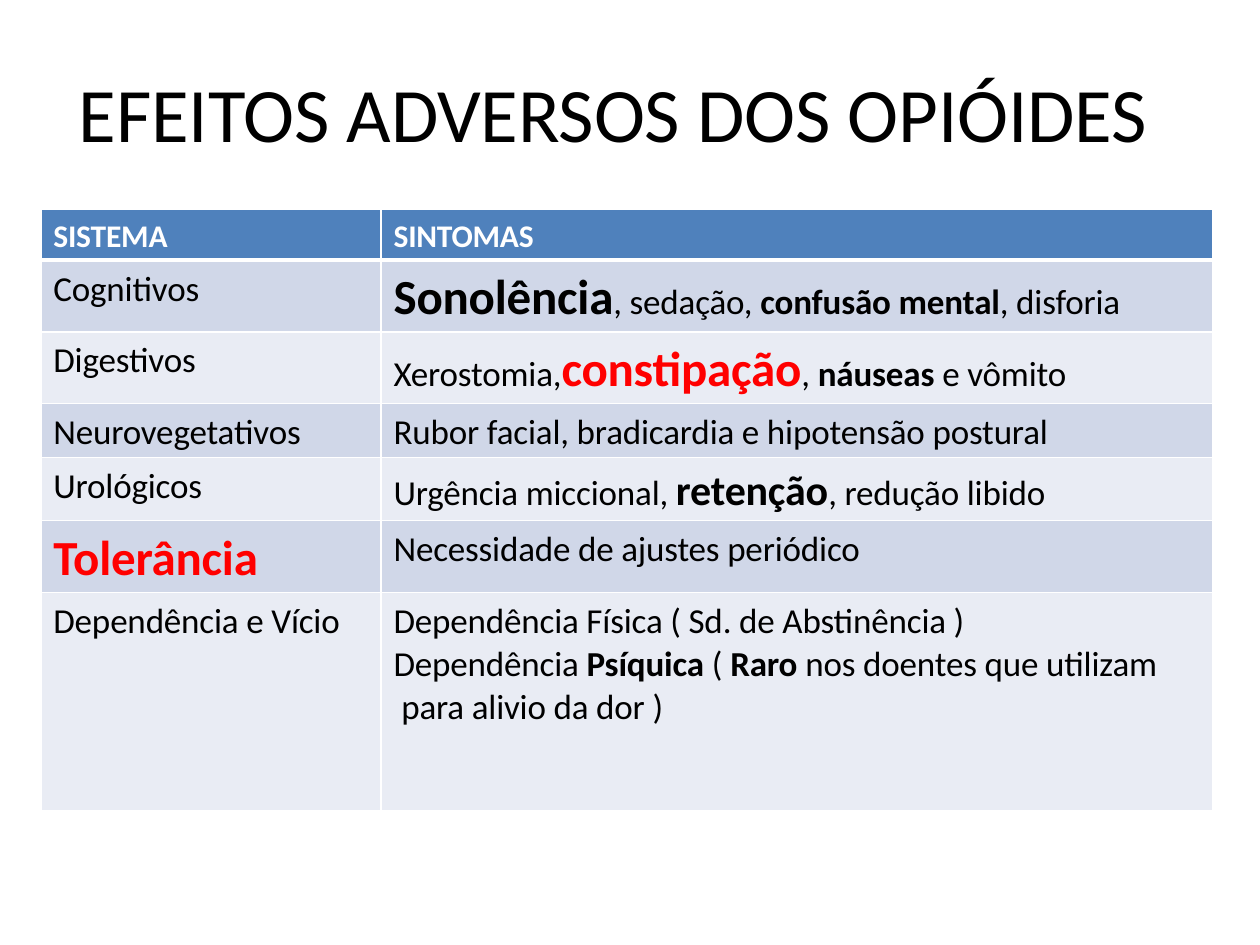
from pptx import Presentation
from pptx.dml.color import RGBColor
from pptx.enum import text
from pptx.oxml import parse_xml
from pptx.oxml.ns import nsdecls
from pptx.util import Pt

FONT = "Calibri"
COLORS = {"black": "000000", "white": "FFFFFF", "red": "FF0000",
          "header": "4F81BC", "odd": "D0D7E8", "even": "E9ECF4"}

# Run styles: size, bold, colour
STYLES = {
    "header": (18, True, "white"),
    "plain": (20, False, "black"),
    "bold": (20, True, "black"),
    "medium": (24, True, "black"),
    "large": (28, True, "black"),
    "alert": (28, True, "red"),
}

COLUMN_WIDTHS = (194.4, 475.2)
# Row height, system, symptoms; a cell is a list of (text, style) runs
ROWS = [
    (28.8, [("SISTEMA", "header")], [("SINTOMAS", "header")]),
    (41, [("Cognitivos", "plain")],
     [("Sonolência", "large"), (", sedação, ", "plain"),
      ("confusão mental", "bold"), (", disforia", "plain")]),
    (41, [("Digestivos", "plain")],
     [("Xerostomia,", "plain"), ("constipação", "alert"), (", ", "plain"),
      ("náuseas ", "bold"), ("e vômito", "plain")]),
    (31, [("Neurovegetativos", "plain")],
     [("Rubor facial, bradicardia e hipotensão postural", "plain")]),
    (36, [("Urológicos", "plain")],
     [("Urgência miccional, ", "plain"), ("retenção", "medium"),
      (", redução libido", "plain")]),
    (41, [("Tolerância", "alert")],
     [("Necessidade de ajustes periódico", "plain")]),
    (124.6, [("Dependência e Vício", "plain")],
     [("Dependência Física ( Sd. de Abstinência )", "plain"), None,
      ("Dependência ", "plain"), ("Psíquica ", "bold"), ("( ", "plain"),
      ("Raro ", "bold"), ("nos doentes que utilizam", "plain"), None,
      (" para alivio da dor )", "plain")]),
]


def color(name):
    return RGBColor.from_string(COLORS[name])


def add_run(paragraph, words):
    run = paragraph.add_run()
    run.text = words
    # Slightly tightened letter spacing
    run._r.get_or_add_rPr().set("spc", "-10")
    return run


def set_margins(area, left, top):
    area.margin_left, area.margin_top = Pt(left), Pt(top)
    area.margin_right = area.margin_bottom = 0


def add_title(slide, left, top, width, height):
    title = slide.shapes.title
    title.left, title.top = Pt(left), Pt(top)
    title.width, title.height = Pt(width), Pt(height)
    frame = title.text_frame
    frame.word_wrap = True
    frame.auto_size = text.MSO_AUTO_SIZE.NONE
    frame.vertical_anchor = text.MSO_ANCHOR.MIDDLE
    set_margins(frame, 0, 0)
    heading = frame.paragraphs[0]
    heading.alignment = text.PP_ALIGN.CENTER
    add_run(heading, "EFEITOS ADVERSOS DOS OPIÓIDES")
    heading.font.name, heading.font.size = FONT, Pt(44)
    heading.font.color.rgb = color("black")


def set_borders(cell, top, bottom):
    properties = cell._tc.get_or_add_tcPr()
    for side, width in (("L", 1), ("R", 1), ("T", top), ("B", bottom)):
        properties.append(parse_xml(
            f'<a:ln{side} {nsdecls("a")} w="{Pt(width)}"><a:solidFill>'
            f'<a:srgbClr val="{COLORS["white"]}"/></a:solidFill></a:ln{side}>'))


def fill_cell(cell, runs, fill):
    cell.fill.solid()
    cell.fill.fore_color.rgb = color(fill)
    set_margins(cell, 7.2, 4.5)
    paragraph = cell.text_frame.paragraphs[0]
    for part in runs:
        if part is None:
            paragraph.add_line_break()
            continue
        words, style = part
        size, bold, ink = STYLES[style]
        font = add_run(paragraph, words).font
        font.name, font.size, font.bold = FONT, Pt(size), bold
        font.color.rgb = color(ink)


def add_effects_table(slide, left, top):
    width, height = sum(COLUMN_WIDTHS), sum(row[0] for row in ROWS)
    table = slide.shapes.add_table(len(ROWS), len(COLUMN_WIDTHS), Pt(left),
                                   Pt(top), Pt(width), Pt(height)).table
    for column, column_width in zip(table.columns, COLUMN_WIDTHS):
        column.width = Pt(column_width)
    for index, (row_height, *cells) in enumerate(ROWS):
        table.rows[index].height = Pt(row_height)
        fill = "header" if index == 0 else ("even", "odd")[index % 2]
        for position, runs in enumerate(cells):
            cell = table.cell(index, position)
            # Thick rule between the header and the first system
            set_borders(cell, 3 if index == 1 else 1, 3 if index == 0 else 1)
            fill_cell(cell, runs, fill)


def main():
    deck = Presentation()
    deck.slide_width, deck.slide_height = Pt(720), Pt(540)
    slide = deck.slides.add_slide(deck.slide_layouts[5])
    add_title(slide, 42.5, 36.5, 615.6, 54.7)
    add_effects_table(slide, 23.3, 119.8)
    deck.save("out.pptx")


if __name__ == "__main__":
    main()
